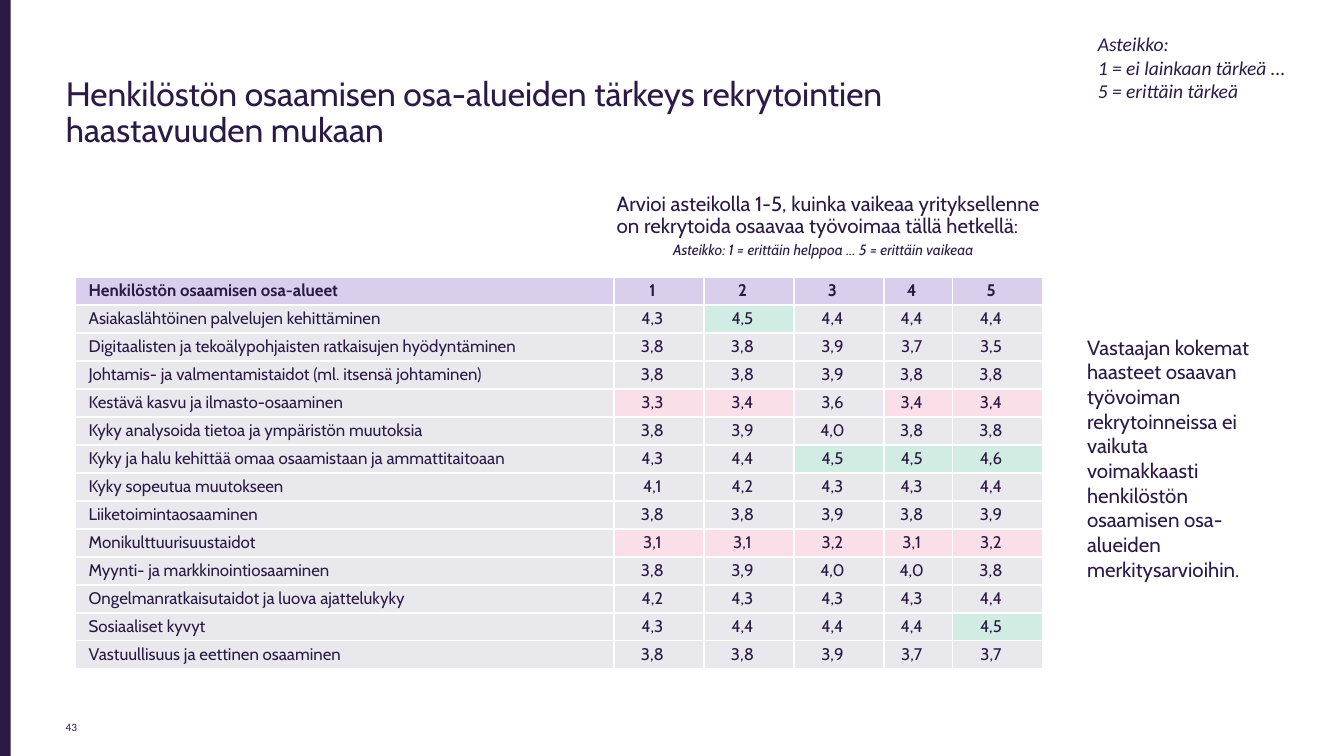
"""Build a slide on the importance of staff skills by recruitment difficulty."""
from dataclasses import dataclass

from lxml.etree import SubElement
from pptx import Presentation
from pptx.dml.color import RGBColor
from pptx.enum.shapes import MSO_SHAPE
from pptx.enum.text import MSO_ANCHOR as Anchor, MSO_AUTO_SIZE as AutoSize, PP_ALIGN as Align
from pptx.oxml.ns import qn
from pptx.slide import Slide
from pptx.table import _Cell as Cell
from pptx.text.text import TextFrame
from pptx.util import Inches, Pt

INK = RGBColor(0x2C, 0x1A, 0x46)
LILAC = RGBColor(0xDA, 0xCE, 0xED)
GREY = RGBColor(0xE9, 0xE8, 0xED)
GREEN = RGBColor(0xD1, 0xEC, 0xE2)
PINK = RGBColor(0xFA, 0xDE, 0xE8)

SLIDE_WIDTH = Inches(10)
SLIDE_HEIGHT = SLIDE_WIDTH * 9 // 16
HIGH, LOW = 4.5, 3.4
COLUMN_WIDTHS = (4.01, 0.67, 0.67, 0.67, 0.51, 0.67)
TABLE_HEIGHT = 2.92


@dataclass(frozen=True)
class Style:
    size: float
    font: str = "Cabin"
    bold: bool = False
    italic: bool = False
    line_spacing: float = 1.0


@dataclass(frozen=True)
class Note:
    text: str
    left: float
    top: float
    width: float
    height: float
    style: Style
    anchor: Anchor = Anchor.TOP


@dataclass(frozen=True)
class Skill:
    name: str
    scores: str


HEADER = Skill("Henkilöstön osaamisen osa-alueet", "1 2 3 4 5")
SKILLS = (
    Skill("Asiakaslähtöinen palvelujen kehittäminen", "4,3 4,5 4,4 4,4 4,4"),
    Skill("Digitaalisten ja tekoälypohjaisten ratkaisujen hyödyntäminen", "3,8 3,8 3,9 3,7 3,5"),
    Skill("Johtamis- ja valmentamistaidot (ml. itsensä johtaminen)", "3,8 3,8 3,9 3,8 3,8"),
    Skill("Kestävä kasvu ja ilmasto-osaaminen", "3,3 3,4 3,6 3,4 3,4"),
    Skill("Kyky analysoida tietoa ja ympäristön muutoksia", "3,8 3,9 4,0 3,8 3,8"),
    Skill("Kyky ja halu kehittää omaa osaamistaan ja ammattitaitoaan", "4,3 4,4 4,5 4,5 4,6"),
    Skill("Kyky sopeutua muutokseen", "4,1 4,2 4,3 4,3 4,4"),
    Skill("Liiketoimintaosaaminen", "3,8 3,8 3,9 3,8 3,9"),
    Skill("Monikulttuurisuustaidot", "3,1 3,1 3,2 3,1 3,2"),
    Skill("Myynti- ja markkinointiosaaminen", "3,8 3,9 4,0 4,0 3,8"),
    Skill("Ongelmanratkaisutaidot ja luova ajattelukyky", "4,2 4,3 4,3 4,3 4,4"),
    Skill("Sosiaaliset kyvyt", "4,3 4,4 4,4 4,4 4,5"),
    Skill("Vastuullisuus ja eettinen osaaminen", "3,8 3,8 3,9 3,7 3,7"),
)

NOTES = (
    Note("43", 0.39, 5.21, 0.41, 0.3, Style(6, "Calibri"), Anchor.BOTTOM),
    Note("Asteikko:\n1 = ei lainkaan tärkeä ...\n5 = erittäin tärkeä",
         8.07, 0.19, 1.75, 0.63, Style(10.5, "Calibri", italic=True)),
    Note("Arvioi asteikolla 1-5, kuinka vaikeaa yrityksellenne on rekrytoida "
         "osaavaa työvoimaa tällä hetkellä:",
         4.49, 1.39, 3.45, 1.53, Style(11, line_spacing=0.9)),
    Note("Asteikko: 1 = erittäin helppoa ... 5 = erittäin vaikeaa",
         4.91, 1.74, 3.02, 0.24, Style(8, italic=True)),
    Note("Vastaajan kokemat haasteet osaavan työvoiman rekrytoinneissa ei vaikuta "
         "voimakkaasti henkilöstön osaamisen osa-alueiden merkitysarvioihin.",
         7.99, 2.44, 1.5, 1.95, Style(11)),
)


def write(frame: TextFrame, text: str, style: Style, align: Align = Align.LEFT) -> None:
    frame.text = text
    for paragraph in frame.paragraphs:
        paragraph.alignment = align
        paragraph.line_spacing = style.line_spacing
        for run in paragraph.runs:
            run.font.size = Pt(style.size)
            run.font.name = style.font
            run.font.bold = style.bold
            run.font.italic = style.italic
            run.font.color.rgb = INK


def add_edge_bar(slide: Slide) -> None:
    bar = slide.shapes.add_shape(MSO_SHAPE.RECTANGLE, 0, 0, Inches(0.08), SLIDE_HEIGHT)
    bar.shadow.inherit = False
    bar.fill.solid()
    bar.fill.fore_color.rgb = INK
    bar.line.fill.background()


def set_title(slide: Slide, text: str) -> None:
    title = slide.shapes.title
    title.left, title.top = Inches(0.39), Inches(0.3)
    title.width, title.height = Inches(7.57), Inches(1.09)
    title.text_frame.auto_size = AutoSize.NONE
    title.text_frame.vertical_anchor = Anchor.MIDDLE
    write(title.text_frame, text, Style(18, line_spacing=0.9))


def add_note(slide: Slide, note: Note) -> None:
    box = slide.shapes.add_textbox(
        Inches(note.left), Inches(note.top), Inches(note.width), Inches(note.height))
    box.text_frame.word_wrap = True
    box.text_frame.vertical_anchor = note.anchor
    write(box.text_frame, note.text, note.style)


def add_white_borders(cell: Cell) -> None:
    properties = cell._tc.get_or_add_tcPr()
    for side in ("a:lnL", "a:lnR", "a:lnT", "a:lnB"):
        border = SubElement(properties, qn(side), w=str(Pt(1)))
        fill = SubElement(border, qn("a:solidFill"))
        SubElement(fill, qn("a:srgbClr"), val="FFFFFF")


def score_colour(score: str) -> RGBColor:
    value = float(score.replace(",", "."))
    if value >= HIGH:
        return GREEN
    return PINK if value <= LOW else GREY


def fill_cell(cell: Cell, text: str, colour: RGBColor, is_name: bool, bold: bool) -> None:
    cell.margin_left = Inches(0.1 if is_name else 0)
    cell.margin_right = Inches(0 if is_name else 0.1)
    cell.margin_top = cell.margin_bottom = 0
    cell.vertical_anchor = Anchor.MIDDLE
    add_white_borders(cell)
    cell.fill.solid()
    cell.fill.fore_color.rgb = colour
    write(cell.text_frame, text, Style(9, bold=bold), Align.LEFT if is_name else Align.CENTER)


def add_skill_table(slide: Slide) -> None:
    skills = (HEADER, *SKILLS)
    table = slide.shapes.add_table(
        len(skills), len(COLUMN_WIDTHS), Inches(0.56), Inches(2.06),
        Inches(sum(COLUMN_WIDTHS)), Inches(TABLE_HEIGHT)).table
    for column, width in zip(table.columns, COLUMN_WIDTHS):
        column.width = Inches(width)
    for row, skill in zip(table.rows, skills):
        row.height = Inches(TABLE_HEIGHT / len(skills))
        is_header = skill is HEADER
        name_cell, *score_cells = row.cells
        fill_cell(name_cell, skill.name, LILAC if is_header else GREY, True, is_header)
        for cell, score in zip(score_cells, skill.scores.split()):
            fill_cell(cell, score, LILAC if is_header else score_colour(score), False, is_header)


def main() -> None:
    deck = Presentation()
    deck.slide_width, deck.slide_height = SLIDE_WIDTH, SLIDE_HEIGHT
    slide = deck.slides.add_slide(deck.slide_layouts[5])
    add_edge_bar(slide)
    set_title(slide, "Henkilöstön osaamisen osa-alueiden tärkeys rekrytointien haastavuuden mukaan")
    add_skill_table(slide)
    for note in NOTES:
        add_note(slide, note)
    deck.save("out.pptx")


if __name__ == "__main__":
    main()
